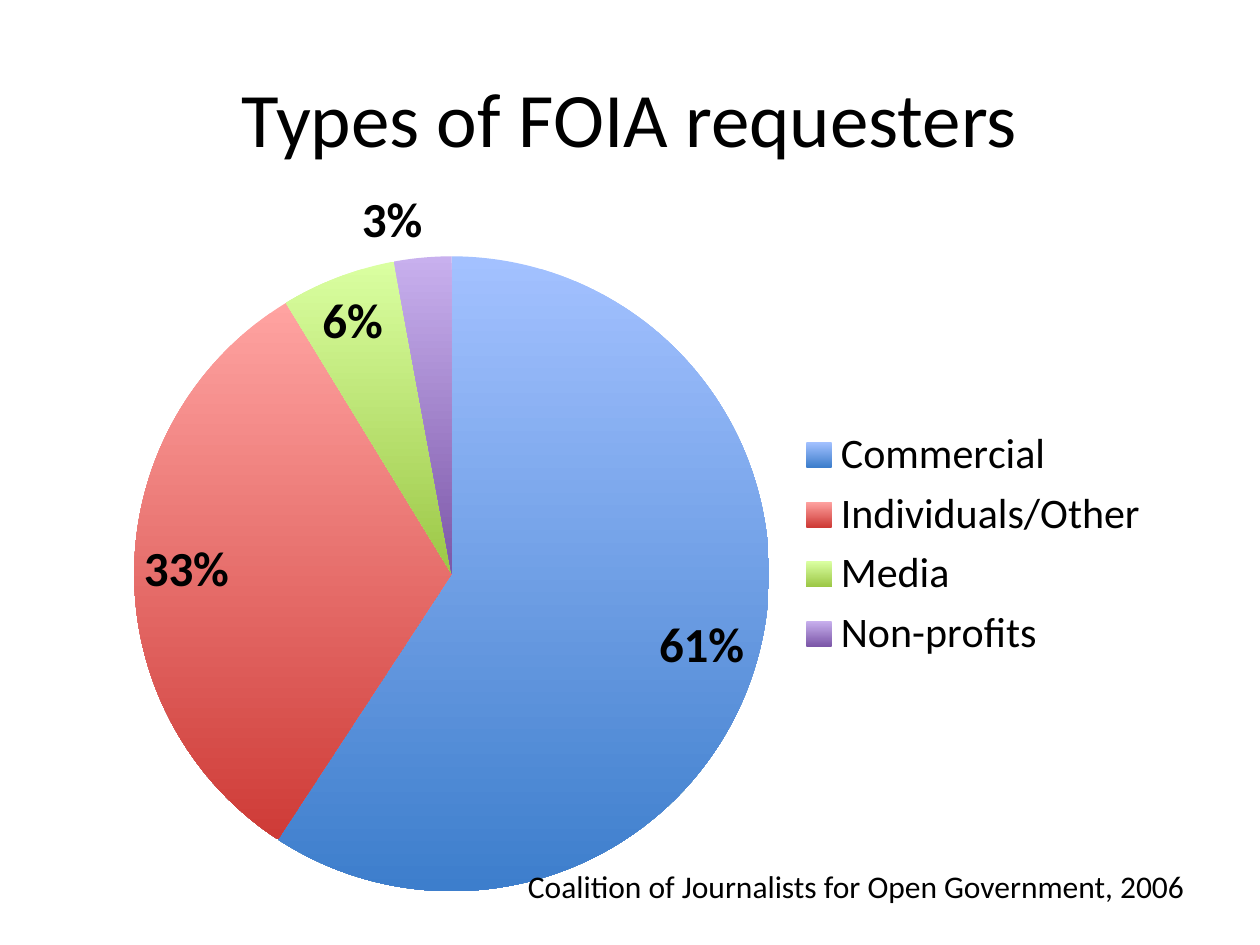
from dataclasses import dataclass

from lxml import etree
from pptx import Presentation
from pptx.chart.data import CategoryChartData
from pptx.dml.color import RGBColor
from pptx.enum.chart import XL_CHART_TYPE, XL_LABEL_POSITION, XL_LEGEND_POSITION
from pptx.enum.text import MSO_ANCHOR, PP_ALIGN
from pptx.oxml.ns import qn
from pptx.util import Inches, Pt

PIE = XL_CHART_TYPE.PIE
BEST_FIT = XL_LABEL_POSITION.BEST_FIT
LEGEND_RIGHT = XL_LEGEND_POSITION.RIGHT
MIDDLE = MSO_ANCHOR.MIDDLE
CENTER, RIGHT = PP_ALIGN.CENTER, PP_ALIGN.RIGHT
TITLE_ONLY = 5


@dataclass(frozen=True)
class Theme:
    font: str = "Calibri"
    text: str = "000000"
    title_size: int = 44
    label_size: int = 28
    legend_size: int = 24
    source_size: int = 18


THEME = Theme()

# Category, share, gradient top colour, gradient bottom colour
REQUESTERS = [
    ("Commercial", 0.61, "A3C1FF", "3D7ECC"),
    ("Individuals/Other", 0.33, "FFA3A1", "CE3B37"),
    ("Media", 0.06, "DAFFA1", "9CC746"),
    ("Non-profits", 0.03, "C8B0EE", "7C57A8"),
]


def style_font(font, size, bold=False):
    font.name = THEME.font
    font.size = Pt(size)
    font.bold = bold
    font.color.rgb = RGBColor.from_string(THEME.text)


def place(sp, left, top, width, height):
    sp.left, sp.top = Inches(left), Inches(top)
    sp.width, sp.height = Inches(width), Inches(height)


def write_line(sp, text, size, align):
    tf = sp.text_frame
    tf.word_wrap = True
    tf.text = text
    p = tf.paragraphs[0]
    p.alignment = align
    style_font(p.runs[0].font, size)


def add_title(slide, text):
    sp = slide.shapes.title
    place(sp, 0.5, 0.3, 9, 1.25)
    write_line(sp, text, THEME.title_size, CENTER)
    sp.text_frame.vertical_anchor = MIDDLE


def set_plot_layout(chart, **fractions):
    """Fix the inner plot area as fractions of the chart frame."""
    plot_area = chart._chartSpace.chart.plotArea
    for old in plot_area.findall(qn("c:layout")):
        plot_area.remove(old)
    layout = etree.Element(qn("c:layout"))
    manual = etree.SubElement(layout, qn("c:manualLayout"))
    settings = {"layoutTarget": "inner", "xMode": "edge", "yMode": "edge", **fractions}
    for tag, value in settings.items():
        etree.SubElement(manual, qn(f"c:{tag}")).set("val", str(value))
    plot_area.insert(0, layout)


def fill_slice(point, top, bottom):
    fill = point.format.fill
    fill.gradient()
    fill.gradient_angle = 270
    for stop, color in zip(fill.gradient_stops, (top, bottom)):
        stop.color.rgb = RGBColor.from_string(color)
    point.format.line.fill.background()


def add_requester_pie(slide):
    data = CategoryChartData(number_format="0%")
    data.categories = [name for name, *_ in REQUESTERS]
    data.add_series("Series 1", [share for _, share, *_ in REQUESTERS])
    chart = slide.shapes.add_chart(
        PIE, Inches(0.8), Inches(1.39), Inches(8.44), Inches(5.86), data
    ).chart
    chart.has_title = False
    style_font(chart.font, THEME.legend_size)
    set_plot_layout(chart, x=0.03, y=0.11, w=0.6, h=0.86)

    chart.has_legend = True
    chart.legend.position = LEGEND_RIGHT
    chart.legend.include_in_layout = False
    style_font(chart.legend.font, THEME.legend_size)

    plot = chart.plots[0]
    plot.vary_by_categories = True
    for i, (_, _, top, bottom) in enumerate(REQUESTERS):
        fill_slice(plot.series[0].points[i], top, bottom)

    labels = plot.series[0].data_labels
    labels.show_value = True
    labels.show_percentage = False
    labels.number_format = "0%"
    labels.number_format_is_linked = False
    labels.position = BEST_FIT
    style_font(labels.font, THEME.label_size, bold=True)


def add_source(slide, text):
    sp = slide.shapes.add_textbox(Inches(2.15), Inches(6.83), Inches(7.35), Inches(0.4))
    write_line(sp, text, THEME.source_size, RIGHT)


def main():
    prs = Presentation()
    prs.slide_width, prs.slide_height = Inches(10), Inches(7.5)
    slide = prs.slides.add_slide(prs.slide_layouts[TITLE_ONLY])
    add_requester_pie(slide)
    add_title(slide, "Types of FOIA requesters")
    add_source(slide, "Coalition of Journalists for Open Government, 2006")
    prs.save("out.pptx")


if __name__ == "__main__":
    main()
